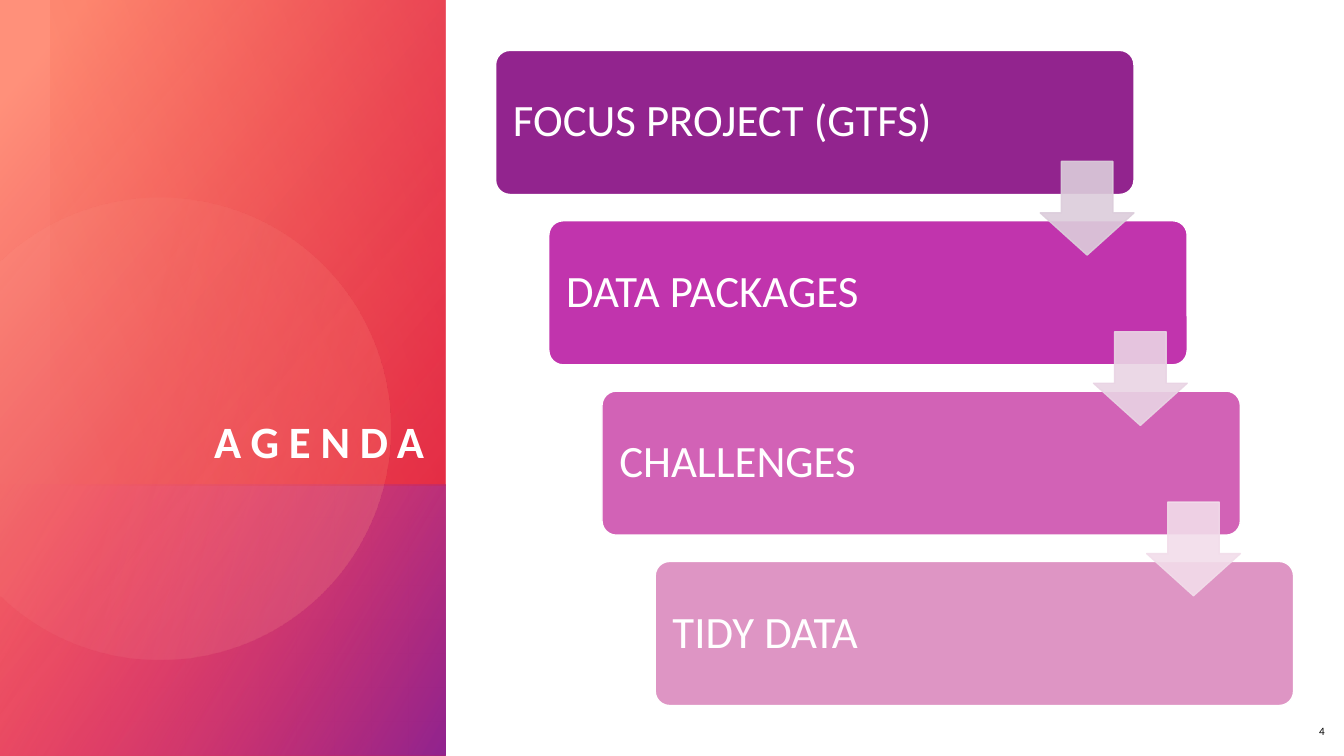
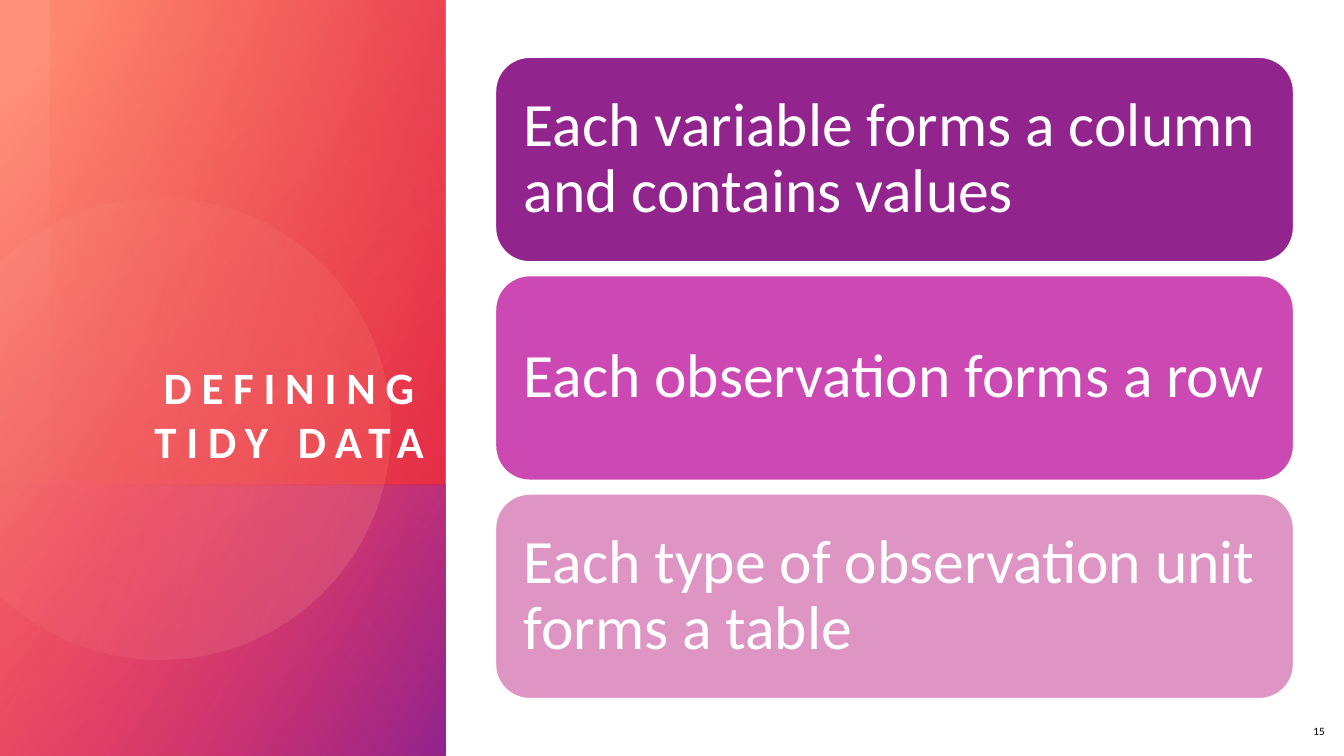
import math

import lxml.etree
import pptx
import pptx.dml.color
import pptx.enum.shapes
import pptx.enum.text
import pptx.oxml.ns
import pptx.util

SHAPE = pptx.enum.shapes.MSO_SHAPE
ALIGN = pptx.enum.text.PP_ALIGN
ANCHOR = pptx.enum.text.MSO_ANCHOR
rgb = pptx.dml.color.RGBColor.from_string

COLORS = {
    "white": "FFFFFF", "black": "000000",
    "salmon": "FF907A", "crimson": "DA002F", "rose": "FF5076",
    "purple": "92248E", "peach": "FFBCAF", "orange": "FE4A00",
    "magenta": "C134AD", "orchid": "D262B6", "pink": "DE95C4", "fuchsia": "CC48B2",
    "arrow 1": "DCCDDB", "arrow 2": "E9D4E4", "arrow 3": "F2DDEA",
}
FONT = "Calibri"

# The slide is a grid of 160 columns by 90 rows of square cells.
CELL = pptx.util.Inches(1 / 12)
COLUMNS, ROWS = 160, 90
PANEL_WIDTH = 53
SPLIT_ROW = 57.75
LEFT, TOP, WIDTH, HEIGHT = 59, 6, 95, 78

# Visible left, top, width, height; rotation; gradient angle; (colour, position, opacity)
PANEL_LAYERS = [
    (0, 0, PANEL_WIDTH, ROWS, 270, 50, [("salmon", 8, 100), ("crimson", 100, 89)]),
    (0, SPLIT_ROW, PANEL_WIDTH, ROWS - SPLIT_ROW, 270, 60,
     [("rose", 0, 0), ("purple", 99, 100)]),
    "disc",
    (6, 0, PANEL_WIDTH - 6, SPLIT_ROW, 90, 110, [("crimson", 0, 29), ("orange", 100, 0)]),
]
DISC_X, DISC_Y, DISC_RADIUS = 19, 51, 27.5

PAGES = [("AGENDA", "4"), ("DEFINING TIDY DATA", "15")]
STEPS = [("FOCUS PROJECT (GTFS)", "purple"), ("DATA PACKAGES", "magenta"),
         ("CHALLENGES", "orchid"), ("TIDY DATA", "pink")]
CARDS = [("Each variable forms a column and contains values", "purple"),
         ("Each observation forms a row", "fuchsia"),
         ("Each type of observation unit forms a table", "pink")]


def paint(shape, colors, opacities, stops=None, angle=0):
    """Fill with one colour and a matching line, or with a two-stop gradient and no line."""
    shape.shadow.inherit = False
    if stops:
        shape.fill.gradient()
        shape.fill.gradient_angle = (360 - angle) % 360
        for stop, color, position in zip(shape.fill.gradient_stops, colors, stops):
            stop.color.rgb = rgb(COLORS[color])
            stop.position = position / 100
        shape.line.fill.background()
    else:
        shape.fill.solid()
        shape.fill.fore_color.rgb = rgb(COLORS[colors[0]])
        shape.line.color.rgb = rgb(COLORS[colors[1]])
        shape.line.width = pptx.util.Pt(1)
    tints = list(shape.element.spPr.iter(pptx.oxml.ns.qn("a:srgbClr")))
    for tint, opacity in zip(tints, opacities):
        if opacity < 100:
            lxml.etree.SubElement(tint, pptx.oxml.ns.qn("a:alpha"), val=str(opacity * 1000))


def write(shape, text, size, color, align, anchor, inset=None):
    frame = shape.text_frame
    frame.word_wrap = True
    frame.vertical_anchor = anchor
    if inset is not None:
        margin = pptx.util.Inches(inset)
        frame.margin_left = frame.margin_right = margin
        frame.margin_top = frame.margin_bottom = margin
    para = frame.paragraphs[0]
    para.alignment = align
    para.font.name = FONT
    para.font.size = pptx.util.Pt(size)
    para.font.color.rgb = rgb(COLORS[color])
    para.add_run().text = text
    return para


deck = pptx.Presentation()
deck.slide_width = COLUMNS * CELL
deck.slide_height = ROWS * CELL
pages = []

# Shared side panel, title and page number
for title, number in PAGES:
    page = deck.slides.add_slide(deck.slide_layouts[6])
    pages.append(page)
    for layer in PANEL_LAYERS:
        if layer == "disc":
            # The disc is cut off by the left edge of the slide.
            reach = math.acos(-DISC_X / DISC_RADIUS)
            turns = [reach * (step / 60 - 1) for step in range(121)]
            points = [(round((DISC_X + DISC_RADIUS * math.cos(turn)) * CELL),
                       round((DISC_Y + DISC_RADIUS * math.sin(turn)) * CELL))
                      for turn in turns]
            outline = page.shapes.build_freeform(*points[0])
            outline.add_line_segments(points[1:], close=True)
            paint(outline.convert_to_shape(), ["peach", "salmon"], [6, 26], [36, 100], 14)
            continue
        left, top, width, height, rotation, angle, stops = layer
        # A quarter turn swaps width and height around the same centre.
        frame = (left + (width - height) / 2, top + (height - width) / 2, height, width)
        band = page.shapes.add_shape(SHAPE.RECTANGLE, *[round(n * CELL) for n in frame])
        band.rotation = rotation
        band.element.spPr.xfrm.set("flipH", "1")
        colors, positions, opacities = zip(*stops)
        paint(band, colors, opacities, positions, angle)

    box = page.shapes.add_textbox(*[round(n * CELL) for n in (6, 11.4, 44.5, 44.2)])
    para = write(box, title, 32, "white", ALIGN.RIGHT, ANCHOR.BOTTOM, 0)
    para.font.bold = True
    para.runs[0].font._element.set("spc", "700")

    box = page.shapes.add_textbox(*[round(n * CELL) for n in (153.1, 84.1, 5.8, 5.9)])
    write(box, number, 8, "black", ALIGN.RIGHT, ANCHOR.MIDDLE)

agenda, tidy = pages

# Agenda: a staircase of steps, joined by arrows
step_width, step_height, step_pitch = 0.8 * WIDTH, 0.22 * HEIGHT, 0.26 * HEIGHT
step_shift = (WIDTH - step_width) / (len(STEPS) - 1)
arrow_size = 0.65 * step_height
for index, (text, color) in enumerate(STEPS):
    frame = (LEFT + index * step_shift, TOP + index * step_pitch, step_width, step_height)
    step = agenda.shapes.add_shape(SHAPE.ROUNDED_RECTANGLE, *[round(n * CELL) for n in frame])
    step.adjustments[0] = 0.1
    paint(step, [color, "white"], [100, 100])
    write(step, text, 32, "white", ALIGN.LEFT, ANCHOR.MIDDLE, 0.13).line_spacing = 0.9

for index in range(len(STEPS) - 1):
    frame = (LEFT + index * step_shift + step_width - arrow_size,
             TOP + index * step_pitch + 0.77 * step_height, arrow_size, arrow_size)
    arrow = agenda.shapes.add_shape(SHAPE.DOWN_ARROW, *[round(n * CELL) for n in frame])
    arrow.adjustments[0] = 0.55
    arrow.adjustments[1] = 0.45
    paint(arrow, [f"arrow {index + 1}"] * 2, [90, 90])

# Tidy data: three equal cards, centred in the content area
card_height, card_pitch = 24.36, 26
cards_top = TOP + (HEIGHT - card_height - card_pitch * (len(CARDS) - 1)) / 2
for index, (text, color) in enumerate(CARDS):
    frame = (LEFT, cards_top + index * card_pitch, WIDTH, card_height)
    card = tidy.shapes.add_shape(SHAPE.ROUNDED_RECTANGLE, *[round(n * CELL) for n in frame])
    paint(card, [color, "white"], [100, 100])
    write(card, text, 44, "white", ALIGN.LEFT, ANCHOR.MIDDLE, 0.18).line_spacing = 0.9

deck.save("out.pptx")
